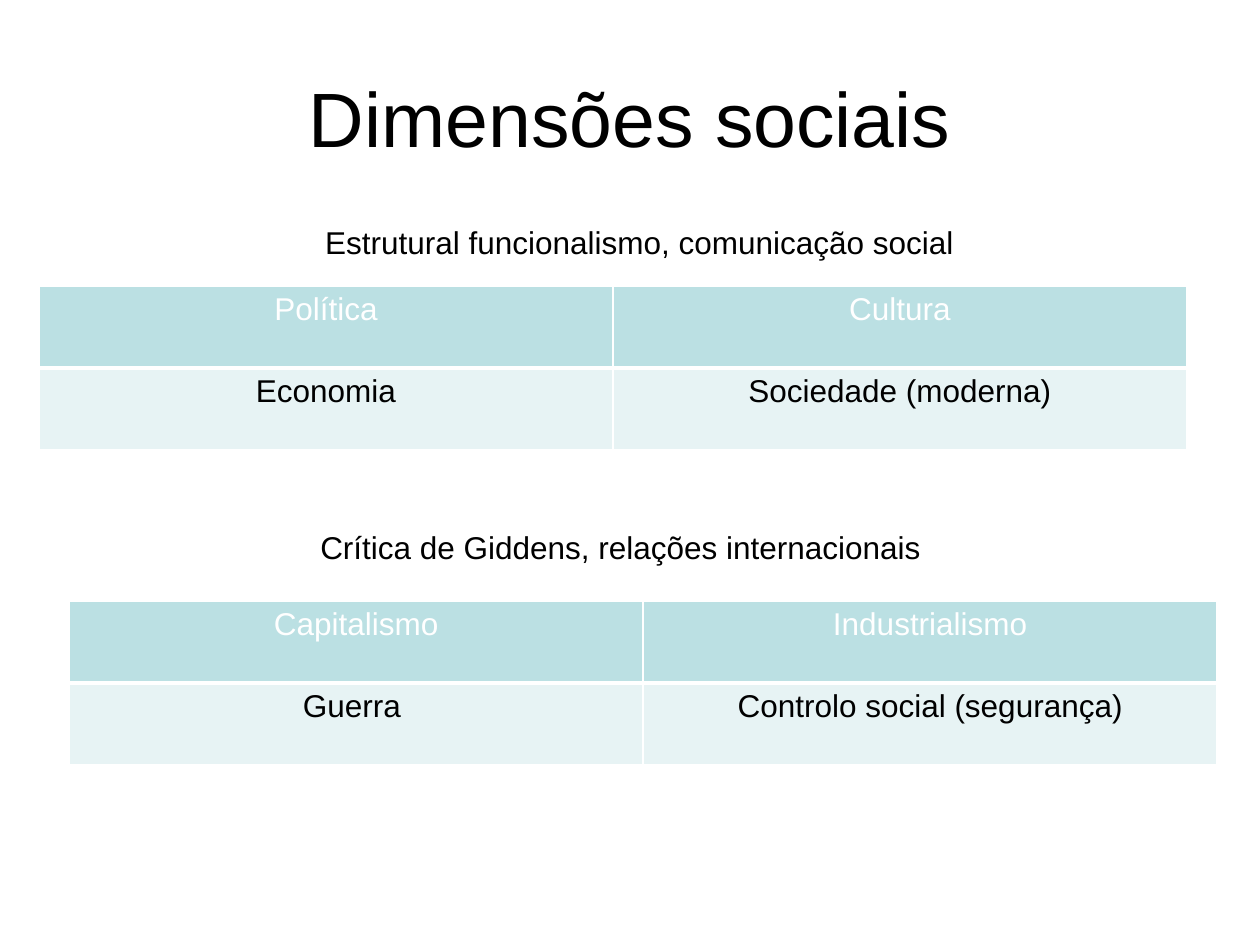
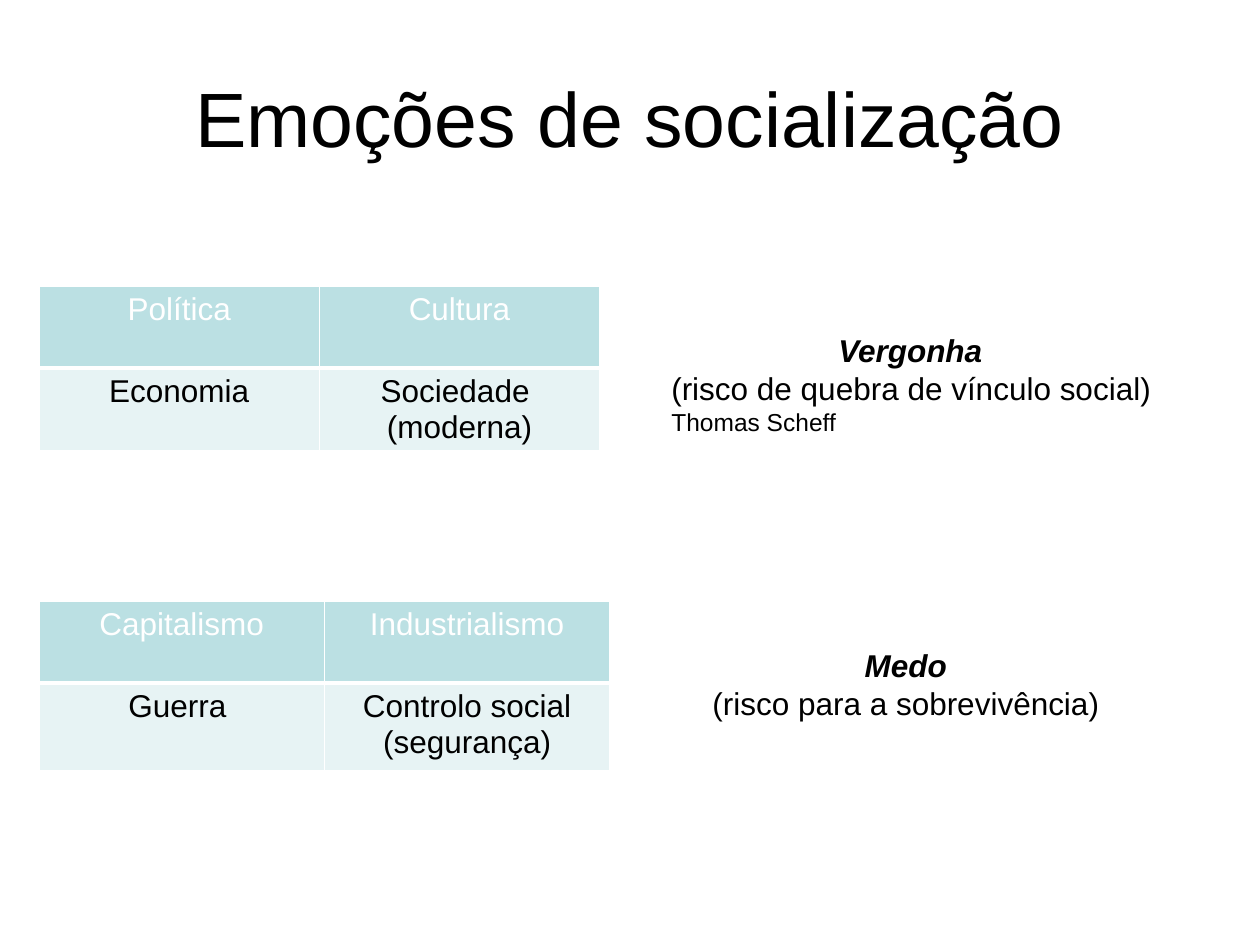
from lxml.etree import SubElement
from pptx import Presentation
from pptx.dml.color import RGBColor
from pptx.enum.text import MSO_ANCHOR, PP_ALIGN
from pptx.oxml import parse_xml
from pptx.oxml.ns import nsdecls, qn
from pptx.util import Inches, Pt

HUES = {"ink": "000000", "paper": "FFFFFF", "head": "BBE0E3", "body": "E7F3F4"}
FACE = "Arial"
WIDE, HIGH = Inches(10), Inches(7.5)
COLS, ROWS = 100, 75
ROW = 6.5
LEFT, TOPS = 3.1, (22.7, 47.7)
FIRST = [["Política", "Cultura"], ["Economia", "Sociedade (moderna)"]]
SPLIT = [FIRST[0], ["Economia", "Sociedade \n(moderna)"]]
SECOND = [["Capitalismo", "Industrialismo"],
          ["Guerra ", "Controlo social (segurança)"]]


def hue(name):
    """Return a named colour."""
    return RGBColor.from_string(HUES[name])


def grid(left, top, wide, high):
    """Turn grid columns and rows into slide lengths."""
    across, down = WIDE / COLS, HIGH / ROWS
    return (round(left * across), round(top * down),
            round(wide * across), round(high * down))


def style(par, size=18, ink="ink", align=PP_ALIGN.CENTER, strong=False):
    """Set the font and alignment of a paragraph."""
    par.alignment = align
    font = par.font
    font.name, font.size = FACE, Pt(size)
    font.color.rgb = hue(ink)
    font.bold = font.italic = strong


def border(cell, base):
    """Draw the four white edges of a cell."""
    props = cell._tc.get_or_add_tcPr()
    for place, (side, width) in enumerate(
            (("L", 1), ("R", 1), ("T", 1), ("B", base))):
        line = parse_xml(f'<a:ln{side} {nsdecls("a")} w="{Pt(width)}"/>')
        fill = SubElement(line, qn("a:solidFill"))
        SubElement(fill, qn("a:srgbClr"), val=HUES["paper"])
        props.insert(place, line)


def matrix(slide, cells, left, top, wide, last=ROW):
    """Add a two-row table with a header."""
    box = grid(left, top, wide, ROW + last)
    table = slide.shapes.add_table(2, 2, *box).table
    for row, high in zip(table.rows, (ROW, last)):
        row.height = grid(0, 0, 0, high)[3]
    looks = (("head", "paper", 3), ("body", "ink", 1))
    for r, (back, ink, base) in enumerate(looks):
        for c, words in enumerate(cells[r]):
            cell = table.cell(r, c)
            cell.text = words
            cell.fill.solid()
            cell.fill.fore_color.rgb = hue(back)
            border(cell, base)
            for par in cell.text_frame.paragraphs:
                style(par, ink=ink)


def note(slide, lines, *box):
    """Add a text box whose lines carry their own style."""
    frame = slide.shapes.add_textbox(*grid(*box)).text_frame
    frame.word_wrap = True
    frame.text = "\n".join(words for words, _ in lines)
    for par, (_, look) in zip(frame.paragraphs, lines):
        style(par, **look)


def page(deck, words):
    """Add a slide with its title."""
    slide = deck.slides.add_slide(deck.slide_layouts[5])
    title = slide.shapes.title
    title.left, title.top, title.width, title.height = grid(5, 3, 90, 12.5)
    title.text = words
    title.text_frame.vertical_anchor = MSO_ANCHOR.MIDDLE
    style(title.text_frame.paragraphs[0], 44)
    return slide


def social(deck):
    """Build the slide of captioned tables."""
    slide = page(deck, "Dimensões sociais")
    parts = (
        ("Estrutural funcionalismo, comunicação social", 14.8, 17.2,
         FIRST, LEFT),
        ("Crítica de Giddens, relações internacionais", 13.3, 41.4,
         SECOND, 5.5))
    for (words, x, y, cells, left), top in zip(parts, TOPS):
        note(slide, [(words, {})], x, y, 71.9, 4)
        matrix(slide, cells, left, top, 91.1)


def moods(deck):
    """Build the slide of tables with an emotion beside each."""
    slide = page(deck, "Emoções de socialização")
    strong, plain = {"strong": True}, {"align": PP_ALIGN.LEFT}
    shame = [("Vergonha ", strong),
             ("(risco de quebra de vínculo social)", plain),
             ("Thomas Scheff", {"size": 14, **plain})]
    fear = [("Medo", strong), ("(risco para a sobrevivência)", {})]
    parts = ((SPLIT, 44.5, ROW, shame, 52.3, 9.4),
             (SECOND, 45.3, 7, fear, 51.6, 7.1))
    for (cells, wide, last, lines, x, high), top in zip(parts, TOPS):
        matrix(slide, cells, LEFT, top, wide, last)
        note(slide, lines, x, top + 3.1, 40.6, high)


def main():
    """Build and save the deck."""
    deck = Presentation()
    deck.slide_width, deck.slide_height = WIDE, HIGH
    social(deck)
    moods(deck)
    deck.save("out.pptx")


if __name__ == "__main__":
    main()
